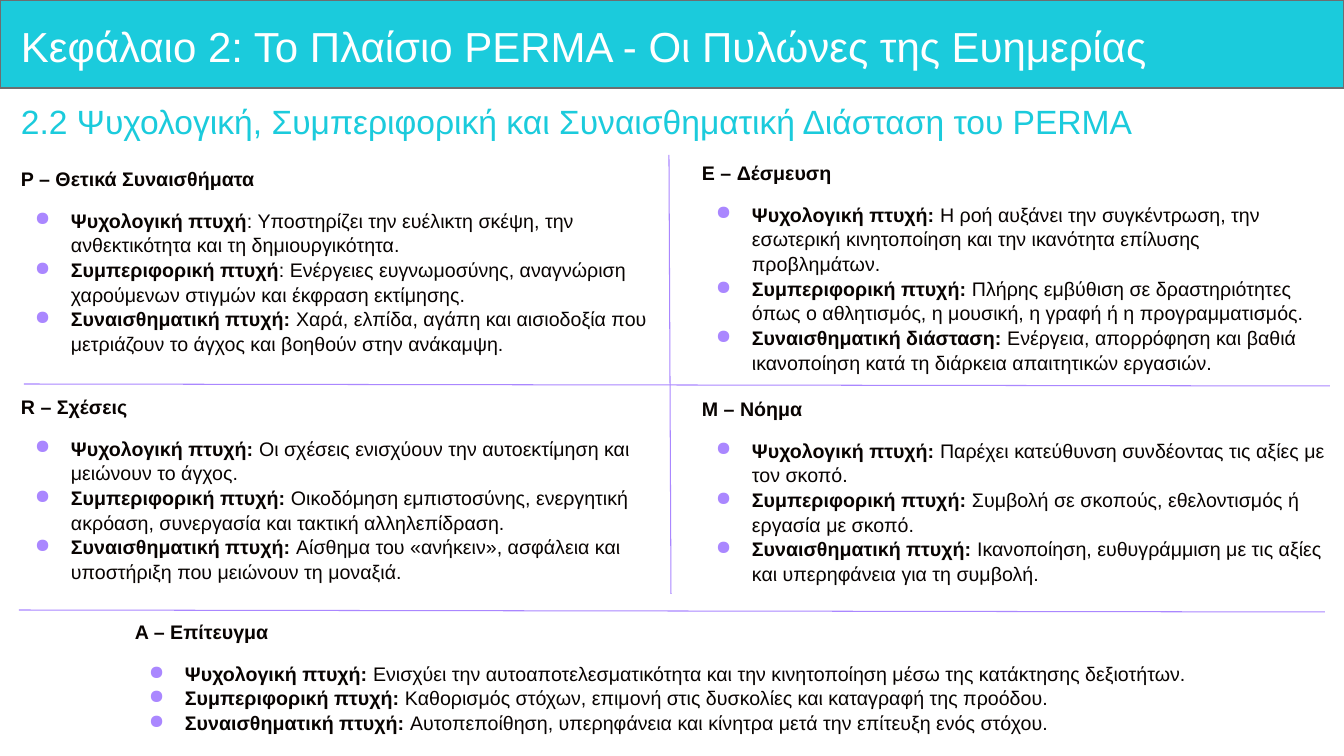
from dataclasses import dataclass
from lxml import etree
from pptx import Presentation
from pptx import util as u
from pptx.dml.color import RGBColor
from pptx.enum import shapes, text
from pptx.oxml import ns

PX = 914400 / 100.8


def px(n):
    """Turn whole px into EMU."""
    return u.Emu(round(n * PX))


@dataclass(frozen=True)
class Theme:
    """Colours, font and type sizes of the slide."""
    font: str = "Arial"
    cyan: str = "1BCBDC"
    edge: str = "6C6E70"
    white: str = "FFFFFF"
    ink: str = "080301"
    violet: str = "AA87FF"
    title: int = 30
    sub: int = 24
    body: int = 14


class Deck:
    """Draws styled elements on the current slide."""

    def __init__(self, theme):
        self.theme = theme
        self.file = Presentation()
        self.file.slide_width, self.file.slide_height = px(1344), px(756)
        self.slide = self.file.slides.add_slide(self.file.slide_layouts[6])

    def put(self, item, form):
        for name, value in form.items():
            setattr(item, name, value)

    def bar(self, *box):
        bar = self.slide.shapes.add_shape(shapes.MSO_SHAPE.RECTANGLE, *map(px, box))
        bar.shadow.inherit = False
        bar.fill.solid()
        bar.fill.fore_color.rgb = RGBColor.from_string(self.theme.cyan)
        bar.line.color.rgb = RGBColor.from_string(self.theme.edge)
        bar.line.width = u.Pt(1)

    def frame(self, box, pads=(10, 5, 10, 5), anchor=text.MSO_ANCHOR.TOP):
        frame = self.slide.shapes.add_textbox(*map(px, box)).text_frame
        sides = ("margin_left", "margin_top", "margin_right", "margin_bottom")
        self.put(frame, dict(zip(sides, map(px, pads)), word_wrap=True,
                             auto_size=text.MSO_AUTO_SIZE.NONE, vertical_anchor=anchor))
        return frame

    def run(self, para, words, size, color, bold=False):
        run = para.add_run()
        run.text = words
        self.put(run.font, dict(name=self.theme.font, size=u.Pt(size), bold=bold))
        run.font.color.rgb = RGBColor.from_string(color)

    def head(self, words, box, size, color, align, **form):
        para = self.frame(box, anchor=text.MSO_ANCHOR.MIDDLE, **form).paragraphs[0]
        self.put(para, dict(line_spacing=0.9, alignment=align))
        self.run(para, words, size, color)

    def bullet(self, para):
        props = para._p.get_or_add_pPr()
        props.set("marL", str(px(50)))
        props.set("indent", str(px(-36)))
        color = etree.SubElement(props, ns.qn("a:buClr"))
        etree.SubElement(color, ns.qn("a:srgbClr"), val=self.theme.violet)
        etree.SubElement(props, ns.qn("a:buChar"), char="●")

    def panel(self, box, name, points):
        look = self.theme
        frame = self.frame(box)
        para = frame.paragraphs[0]
        self.put(para, dict(space_before=u.Pt(12), line_spacing=1.05))
        self.run(para, name, look.body, look.ink, True)
        for n, (label, words) in enumerate(points):
            para = frame.add_paragraph()
            self.put(para, dict(space_before=u.Pt(0 if n else 12), line_spacing=1.05))
            self.bullet(para)
            self.run(para, label, look.body, look.ink, True)
            self.run(para, words, look.body, look.ink)

    def rule(self, *ends):
        rule = self.slide.shapes.add_connector(shapes.MSO_CONNECTOR.STRAIGHT, *map(px, ends))
        rule.line.color.rgb = RGBColor.from_string(self.theme.violet)
        rule.line.width = u.Pt(0.75)
        etree.SubElement(rule._element.spPr, ns.qn("a:effectLst"))


MIND, ACT, FEEL = "Ψυχολογική πτυχή", "Συμπεριφορική πτυχή", "Συναισθηματική πτυχή"
PANELS = [
    ((11, 161, 651, 235), "P – Θετικά Συναισθήματα", [
        (MIND, ": Υποστηρίζει την ευέλικτη σκέψη, την ανθεκτικότητα και τη δημιουργικότητα."),
        (ACT, ": Ενέργειες ευγνωμοσύνης, αναγνώριση χαρούμενων στιγμών και έκφραση εκτίμησης."),
        (FEEL + ": ", "Χαρά, ελπίδα, αγάπη και αισιοδοξία που μετριάζουν το άγχος "
                      "και βοηθούν στην ανάκαμψη.")]),
    ((11, 389, 651, 217), "R – Σχέσεις", [
        (MIND + ": ", "Οι σχέσεις ενισχύουν την αυτοεκτίμηση και μειώνουν το άγχος."),
        (ACT + ": ", "Οικοδόμηση εμπιστοσύνης, ενεργητική ακρόαση, συνεργασία "
                     "και τακτική αλληλεπίδραση."),
        (FEEL + ": ", "Αίσθημα του «ανήκειν», ασφάλεια και υποστήριξη που μειώνουν τη μοναξιά.")]),
    ((692, 155, 651, 227), "E – Δέσμευση", [
        (MIND + ": ", "Η ροή αυξάνει την συγκέντρωση, την εσωτερική κινητοποίηση "
                      "και την ικανότητα επίλυσης προβλημάτων."),
        (ACT + ": ", "Πλήρης εμβύθιση σε δραστηριότητες όπως ο αθλητισμός, η μουσική, "
                     "η γραφή ή η προγραμματισμός."),
        ("Συναισθηματική διάσταση: ", "Ενέργεια, απορρόφηση και βαθιά ικανοποίηση "
                                      "κατά τη διάρκεια απαιτητικών εργασιών.")]),
    ((692, 391, 651, 217), "M – Νόημα", [
        (MIND + ": ", "Παρέχει κατεύθυνση συνδέοντας τις αξίες με τον σκοπό."),
        (ACT + ": ", "Συμβολή σε σκοπούς, εθελοντισμός ή εργασία με σκοπό."),
        (FEEL + ": ", "Ικανοποίηση, ευθυγράμμιση με τις αξίες και υπερηφάνεια για τη συμβολή.")]),
    ((125, 614, 1100, 129), "A – Επίτευγμα", [
        (MIND + ": ", "Ενισχύει την αυτοαποτελεσματικότητα και την κινητοποίηση "
                      "μέσω της κατάκτησης δεξιοτήτων."),
        (ACT + ": ", "Καθορισμός στόχων, επιμονή στις δυσκολίες και καταγραφή της προόδου."),
        (FEEL + ": ", "Αυτοπεποίθηση, υπερηφάνεια και κίνητρα μετά την επίτευξη ενός στόχου.")]),
]
RULES = [(24, 384, 1330, 386), (669, 155, 671, 594), (19, 610, 1325, 612)]


def main():
    """Build and save the slide."""
    look = Theme()
    deck = Deck(look)
    deck.bar(0, 0, 1344, 88)
    deck.head("Κεφάλαιο 2: Το Πλαίσιο PERMA - Οι Πυλώνες της Ευημερίας", (11, 9, 1316, 79),
              look.title, look.white, text.PP_ALIGN.LEFT, pads=(10, 6, 6, 6))
    deck.head("2.2 Ψυχολογική, Συμπεριφορική και Συναισθηματική Διάσταση του PERMA",
              (11, 94, 1316, 60), look.sub, look.cyan, text.PP_ALIGN.JUSTIFY)
    for panel in PANELS:
        deck.panel(*panel)
    for ends in RULES:
        deck.rule(*ends)
    deck.file.save("out.pptx")


if __name__ == "__main__":
    main()
